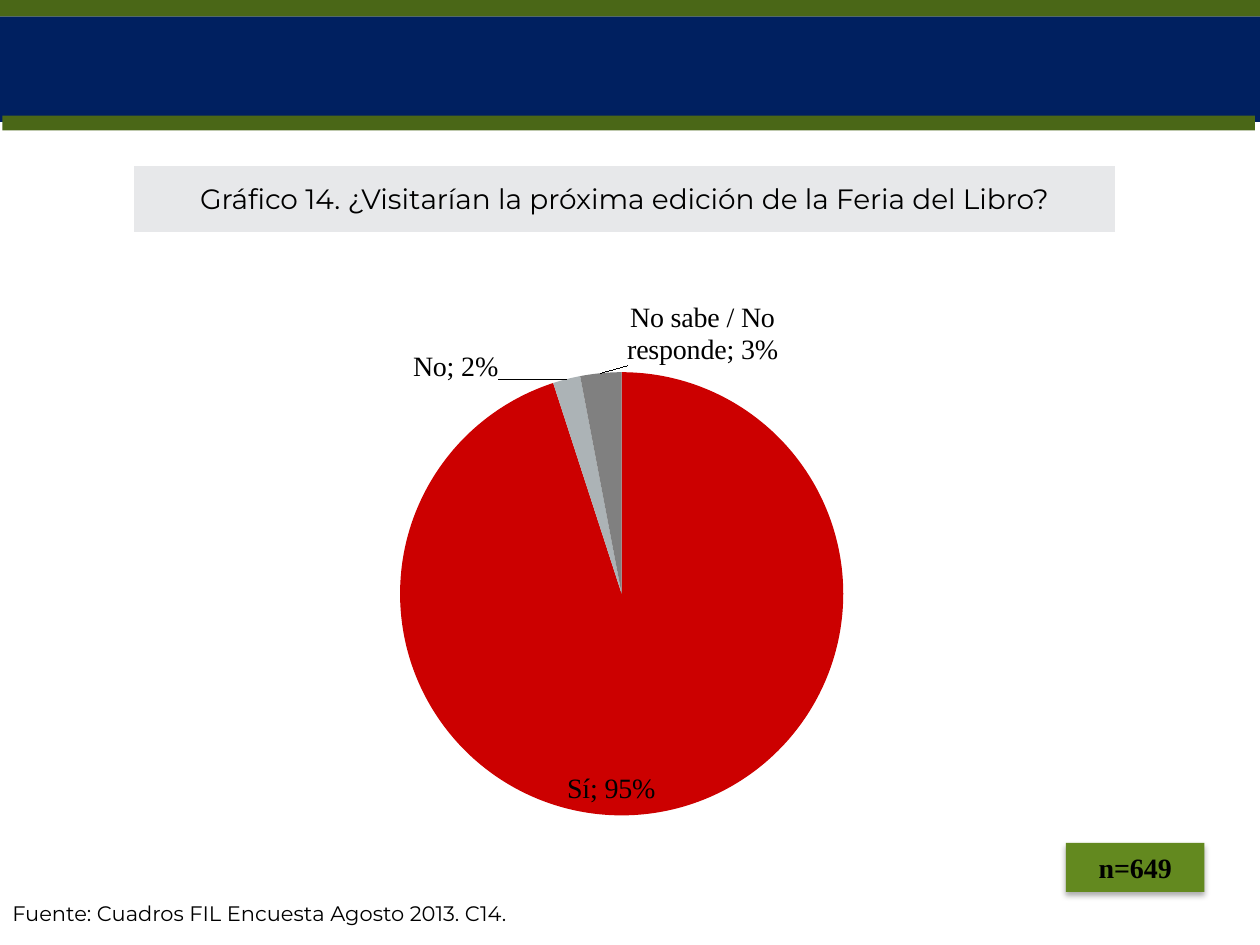
from lxml import etree
from pptx import Presentation
from pptx import util as u
from pptx.chart.data import CategoryChartData
from pptx.dml.color import RGBColor
from pptx.enum import chart as charts, shapes, text
from pptx.oxml import parse_xml
from pptx.oxml.ns import nsdecls, qn

NAVY = RGBColor(0x00, 0x20, 0x60)
DARK_GREEN = RGBColor(0x4A, 0x67, 0x17)
GREEN = RGBColor(0x63, 0x89, 0x1F)
LIGHT_GRAY = RGBColor(0xE7, 0xE8, 0xEA)
BLACK = RGBColor(0, 0, 0)
RED = RGBColor(0xCC, 0x00, 0x00)
SILVER = RGBColor(0xAC, 0xB3, 0xB6)
GRAY = RGBColor(0x80, 0x80, 0x80)
SANS, SERIF = "Montserrat", "Times New Roman"

SHADOW = f"""<a:effectLst {nsdecls('a')}>
  <a:outerShdw blurRad="44450" dist="27940" dir="5400000" rotWithShape="0">
    <a:srgbClr val="000000"><a:alpha val="32000"/></a:srgbClr>
  </a:outerShdw></a:effectLst>"""


def box(*lengths):
    return [u.Cm(length) for length in lengths]


def set_font(font, name, size, bold=False):
    font.name, font.size, font.bold = name, u.Pt(size), bold
    font.color.rgb = BLACK


def add_rectangle(slide, place, color):
    shape = slide.shapes.add_shape(shapes.MSO_SHAPE.RECTANGLE, *box(*place))
    shape.fill.solid()
    shape.fill.fore_color.rgb = color
    shape.line.fill.background()
    shape.shadow.inherit = False
    return shape


def add_sample_size(slide, words):
    shape = add_rectangle(slide, (21.49, 16.99, 2.79, 0.99), GREEN)
    properties = shape._element.spPr
    properties.replace(properties.find(qn("a:effectLst")), parse_xml(SHADOW))
    shape.text_frame.vertical_anchor = text.MSO_ANCHOR.MIDDLE
    paragraph = shape.text_frame.paragraphs[0]
    paragraph.text = words
    paragraph.alignment = text.PP_ALIGN.CENTER
    set_font(paragraph.font, SERIF, 16, bold=True)


def add_source(slide, words):
    frame = slide.shapes.add_textbox(*box(0, 18.03, 11.96, 0.76)).text_frame
    frame.word_wrap = False
    frame.auto_size = text.MSO_AUTO_SIZE.SHAPE_TO_FIT_TEXT
    paragraph = frame.paragraphs[0]
    paragraph.text = words
    set_font(paragraph.font, SANS, 12)


def add_title_table(slide, words):
    table = slide.shapes.add_table(1, 1, *box(2.69, 3.33, 19.81, 1.37)).table
    table.first_row = table.horz_banding = False
    cell = table.cell(0, 0)
    # White borders go ahead of the fill in the cell properties
    properties = cell._tc.get_or_add_tcPr()
    for side in ("lnL", "lnR", "lnT", "lnB"):
        properties.append(parse_xml(
            f'<a:{side} {nsdecls("a")} w="12700"><a:solidFill>'
            f'<a:srgbClr val="FFFFFF"/></a:solidFill></a:{side}>'))
    cell.fill.solid()
    cell.fill.fore_color.rgb = LIGHT_GRAY
    cell.vertical_anchor = text.MSO_ANCHOR.MIDDLE
    cell.margin_left = cell.margin_right = cell.margin_top = u.Cm(0.03)
    cell.margin_bottom = 0
    paragraph = cell.text_frame.paragraphs[0]
    paragraph.text = words
    paragraph.alignment = text.PP_ALIGN.CENTER
    set_font(paragraph.font, SANS, 16)


def manual_layout(target="", **values):
    parts = "".join(f'<c:{key} val="{value}"/>' for key, value in values.items())
    return parse_xml(f'<c:layout {nsdecls("c")}><c:manualLayout>{target}{parts}'
                     '</c:manualLayout></c:layout>')


def show_category_and_value(labels):
    """Turn on category names and the separator in a label element."""
    labels.find(qn("c:showCatName")).set("val", "1")
    separator = etree.Element(qn("c:separator"))
    separator.text = "; "
    last_switch = labels.find(qn("c:showBubbleSize"))
    if last_switch is None:
        last_switch = labels.find(qn("c:showPercent"))
    last_switch.addnext(separator)


def add_pie(slide, slices):
    data = CategoryChartData(number_format="0%")
    data.categories = [name for name, *_ in slices]
    data.add_series("Series 1", [value for _, value, *_ in slices])
    chart = slide.shapes.add_chart(
        charts.XL_CHART_TYPE.PIE, *box(1.3, 5.44, 22.4, 11.1), data).chart
    chart.has_legend = chart.has_title = False
    set_font(chart.font, SERIF, 16)
    plot = chart.plots[0]
    plot.vary_by_categories = True
    series = plot.series[0]

    # Labels of the whole series
    labels = series.data_labels
    labels.show_value = labels.show_category_name = True
    labels.number_format, labels.number_format_is_linked = "0%", False
    set_font(labels.font, SERIF, 16)
    show_category_and_value(labels._element)

    # Colour and label of each slice
    for index, (_, _, color, position, offset) in enumerate(slices):
        point = series.points[index]
        point.format.fill.solid()
        point.format.fill.fore_color.rgb = color
        point.format.line.fill.background()
        set_font(point.data_label.font, SERIF, 16)
        point.data_label.position = position
        label = labels._element.findall(qn("c:dLbl"))[index]
        show_category_and_value(label)
        if offset:
            x, y = offset
            label.find(qn("c:idx")).addnext(manual_layout(x=x, y=y))

    # Position of the pie within the chart
    area = chart._chartSpace.find(".//" + qn("c:plotArea"))
    for layout in area.findall(qn("c:layout")):
        area.remove(layout)
    area.insert(0, manual_layout('<c:layoutTarget val="inner"/>', xMode="edge",
                                 yMode="edge", x=0.302, y=0.186, w=0.399, h=0.805))


def main():
    presentation = Presentation()
    presentation.slide_width, presentation.slide_height = box(25.4, 19.05)
    slide = presentation.slides.add_slide(presentation.slide_layouts[6])

    # Header bands
    add_rectangle(slide, (0, 0.33, 25.4, 2.13), NAVY)
    add_rectangle(slide, (0, -0.08, 25.4, 0.41), DARK_GREEN)
    add_rectangle(slide, (0.05, 2.33, 25.25, 0.3), DARK_GREEN)

    # Notes around the chart
    add_source(slide, "Fuente: Cuadros FIL Encuesta Agosto 2013. C14.")
    add_sample_size(slide, "n=649")
    add_title_table(
        slide, "Gráfico 14. ¿Visitarían la próxima edición de la Feria del Libro?")

    # Answers
    inside = charts.XL_LABEL_POSITION.INSIDE_END
    outside = charts.XL_LABEL_POSITION.OUTSIDE_END
    add_pie(slide, [
        ("Sí", 0.95, RED, inside, None),
        ("No", 0.02, SILVER, outside, (-0.06, 0.02)),
        ("No sabe / No responde", 0.03, GRAY, outside, (0.16, 0)),
    ])
    presentation.save("out.pptx")


if __name__ == "__main__":
    main()
